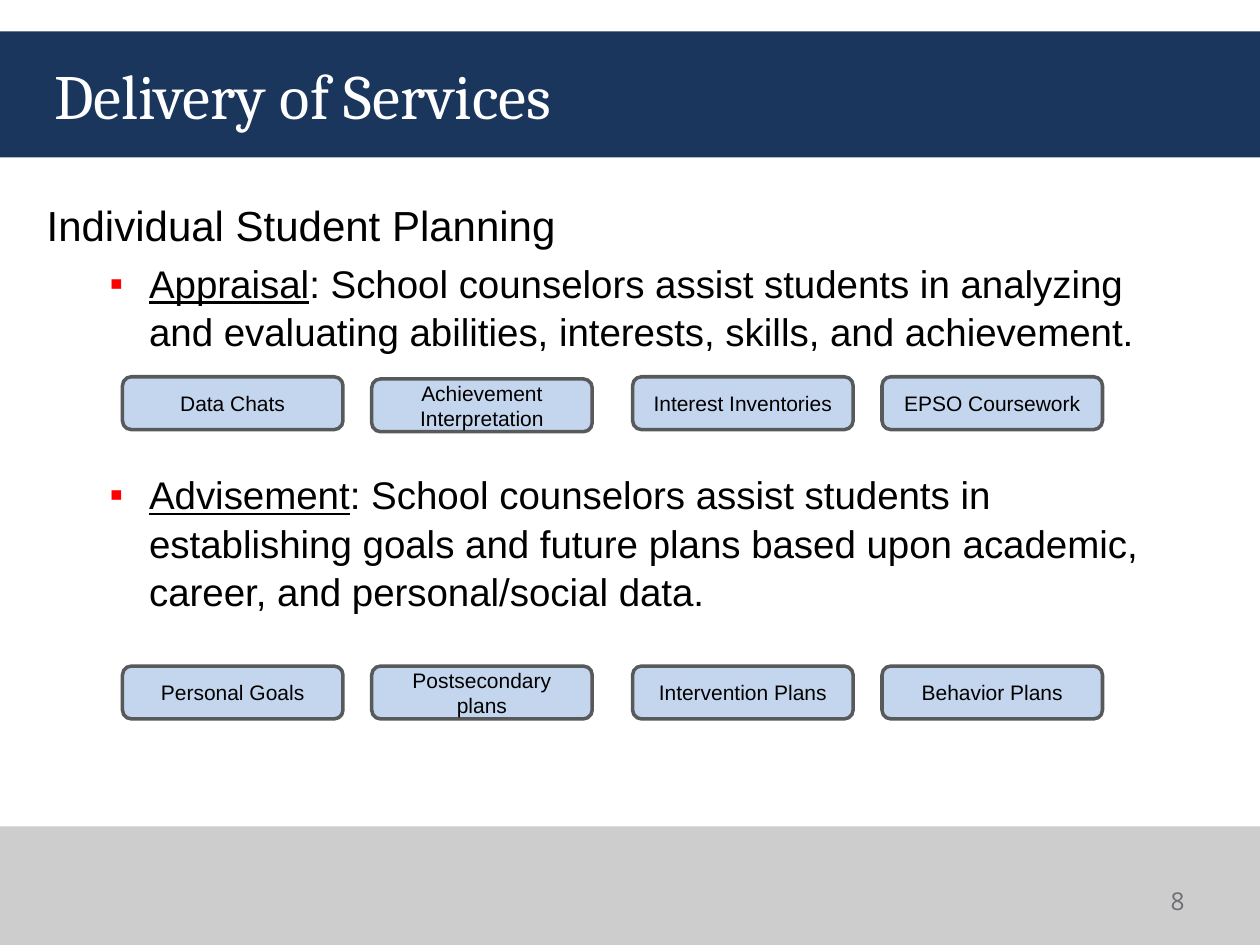
from dataclasses import dataclass

from lxml import etree
from pptx import Presentation
from pptx.dml.color import RGBColor
from pptx.enum import shapes, text
from pptx.oxml.ns import qn
from pptx.util import Pt

COLORS = {
    "navy": "1B365D",
    "footer": "CDCDCD",
    "number": "6E7073",
    "box": "C4D5EE",
    "outline": "57595B",
    "bullet": "FF0000",
    "black": "000000",
    "white": "FFFFFF",
}
COLUMN_LEFTS = (70, 212.4, 361.5, 504)
BOX_WIDTH, BOX_HEIGHT = 126, 30.2


@dataclass
class Service:
    name: str
    description: str
    space_before: float
    box_tops: tuple[float, ...]
    examples: tuple[str, ...]


SERVICES = (
    Service(
        "Appraisal",
        ": School counselors assist students in analyzing and evaluating "
        "abilities, interests, skills, and achievement.",
        4.4,
        (215.3, 216.5, 215.3, 215.3),
        ("Data Chats", "Achievement Interpretation",
         "Interest Inventories", "EPSO Coursework"),
    ),
    Service(
        "Advisement",
        ": School counselors assist students in establishing goals and future "
        "plans based upon academic, career, and personal/social data.",
        65.4,
        (380.6,) * 4,
        ("Personal Goals", "Postsecondary plans",
         "Intervention Plans", "Behavior Plans"),
    ),
)


def color(name: str) -> RGBColor:
    return RGBColor.from_string(COLORS[name])


def format_font(paragraph, size: float, font_name: str, color_name: str) -> None:
    paragraph.font.size = Pt(size)
    paragraph.font.name = font_name
    paragraph.font.color.rgb = color(color_name)


def add_band(slide, top: float, height: float, color_name: str) -> None:
    """Add a full-width band behind everything else."""
    band = slide.shapes.add_shape(
        shapes.MSO_SHAPE.RECTANGLE, 0, Pt(top), Pt(720), Pt(height))
    band.shadow.inherit = False
    band.fill.solid()
    band.fill.fore_color.rgb = color(color_name)
    band.line.fill.background()
    slide.shapes._spTree.insert(2, band._element)


def format_title(slide) -> None:
    title = slide.shapes.title
    title.left, title.top = Pt(23.8), Pt(18)
    title.width, title.height = Pt(653.8), Pt(72)
    frame = title.text_frame
    frame.text = "Delivery of Services"
    frame.auto_size = text.MSO_AUTO_SIZE.NONE
    frame.vertical_anchor = text.MSO_ANCHOR.MIDDLE
    paragraph = frame.paragraphs[0]
    paragraph.alignment = text.PP_ALIGN.LEFT
    format_font(paragraph, 36, "Cambria", "white")


def add_bullet(paragraph) -> None:
    properties = paragraph._p.get_or_add_pPr()
    properties.set("marL", str(Pt(58.5)))
    properties.set("indent", str(-Pt(22.5)))
    bullet_color = etree.SubElement(properties, qn("a:buClr"))
    etree.SubElement(bullet_color, qn("a:srgbClr"), val=COLORS["bullet"])
    etree.SubElement(properties, qn("a:buFont"), typeface="Arial")
    etree.SubElement(properties, qn("a:buChar"), char="▪")


def add_body(slide) -> None:
    body = slide.shapes.add_textbox(Pt(19.6), Pt(109), Pt(660), Pt(356))
    frame = body.text_frame
    frame.word_wrap = True
    heading = frame.paragraphs[0]
    heading.text = "Individual Student Planning"
    heading.line_spacing = 1.05
    format_font(heading, 24, "Arial", "black")
    for service in SERVICES:
        paragraph = frame.add_paragraph()
        add_bullet(paragraph)
        paragraph.line_spacing = 1.05
        paragraph.space_before = Pt(service.space_before)
        format_font(paragraph, 22, "Arial", "black")
        name = paragraph.add_run()
        name.text = service.name
        name.font.underline = True
        paragraph.add_run().text = service.description


def add_example(slide, label: str, left: float, top: float) -> None:
    box = slide.shapes.add_shape(
        shapes.MSO_SHAPE.FLOWCHART_ALTERNATE_PROCESS,
        Pt(left), Pt(top), Pt(BOX_WIDTH), Pt(BOX_HEIGHT))
    box.shadow.inherit = False
    box.fill.solid()
    box.fill.fore_color.rgb = color("box")
    box.line.color.rgb = color("outline")
    box.line.width = Pt(2)
    frame = box.text_frame
    frame.word_wrap = True
    frame.vertical_anchor = text.MSO_ANCHOR.MIDDLE
    paragraph = frame.paragraphs[0]
    paragraph.text = label
    paragraph.alignment = text.PP_ALIGN.CENTER
    format_font(paragraph, 12, "Arial", "black")


def add_slide_number(slide) -> None:
    number = slide.shapes.add_textbox(Pt(648), Pt(500.4), Pt(36), Pt(28.8))
    frame = number.text_frame
    frame.word_wrap = True
    frame.vertical_anchor = text.MSO_ANCHOR.MIDDLE
    paragraph = frame.paragraphs[0]
    paragraph.text = "8"
    paragraph.alignment = text.PP_ALIGN.RIGHT
    format_font(paragraph, 14, "Open Sans", "number")


def main() -> None:
    presentation = Presentation()
    presentation.slide_width, presentation.slide_height = Pt(720), Pt(540)
    slide = presentation.slides.add_slide(presentation.slide_layouts[5])
    add_band(slide, 18, 72, "navy")
    add_band(slide, 472.3, 67.7, "footer")
    format_title(slide)
    add_body(slide)
    add_slide_number(slide)
    for service in SERVICES:
        for label, left, top in zip(service.examples, COLUMN_LEFTS, service.box_tops):
            add_example(slide, label, left, top)
    presentation.save("out.pptx")


if __name__ == "__main__":
    main()
